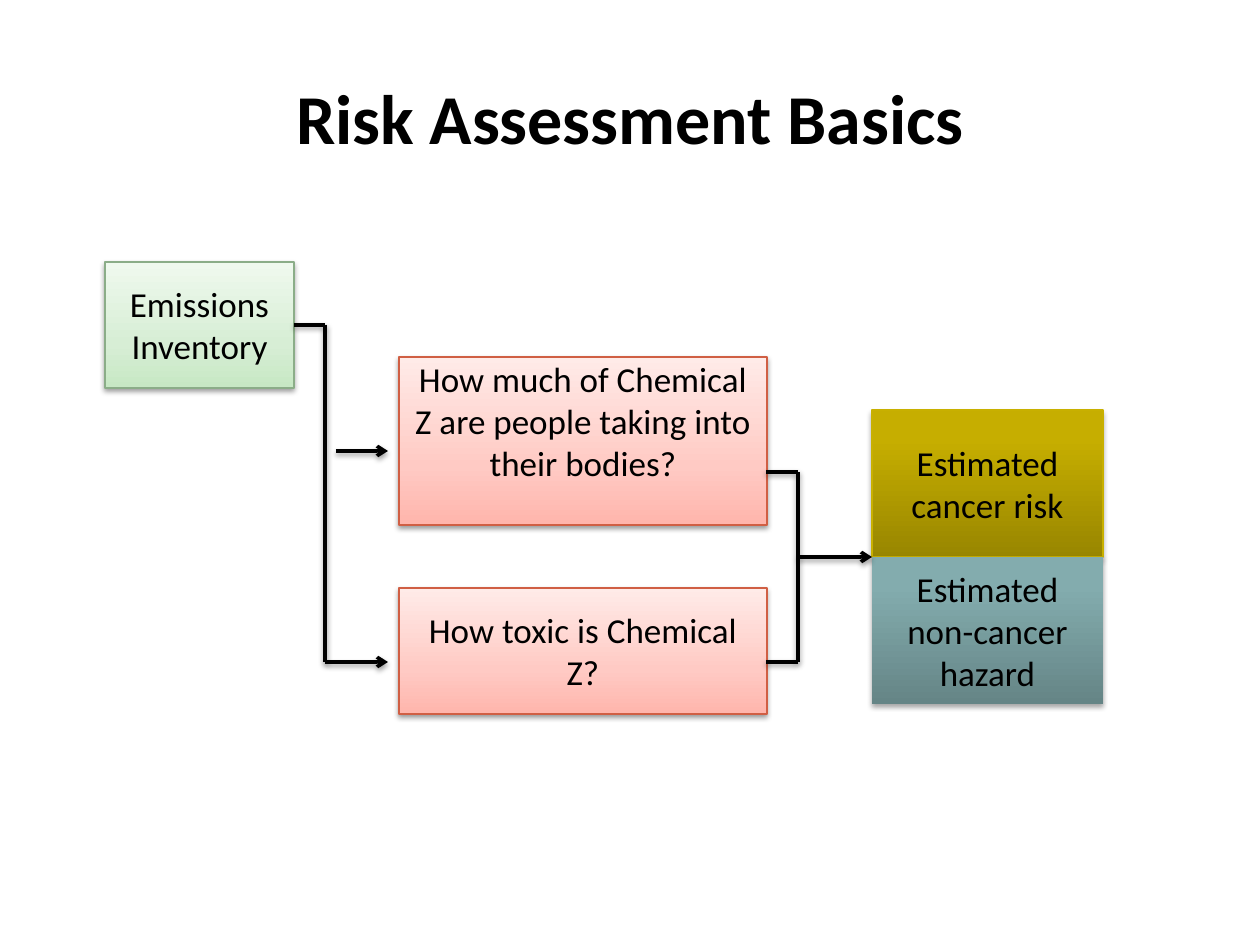
from copy import deepcopy

from lxml.etree import SubElement
from pptx import Presentation
from pptx.dml.color import RGBColor
from pptx.enum.shapes import MSO_CONNECTOR, MSO_SHAPE
from pptx.enum.text import MSO_ANCHOR, PP_ALIGN
from pptx.oxml.ns import qn
from pptx.util import Inches, Pt

SCALE = Inches(1) / 126  # EMU in one px
FONT = "Calibri"
HEX = {
    "ink": "000000",
    "green": "8BAD88",
    "red": "D05F44",
    "gold": "C8B000",
}
# Colours at each stop, from bottom to top
FADES = {
    "green": ((0, "C7E8C4"), (0.35, "D7EED5"), (1, "EFF9EE")),
    "red": ((0, "FFB5AC"), (0.35, "FFCAC4"), (1, "FFEBE8")),
    "gold": ((0, "988600"), (0.8, "C6AE00"), (1, "C7AF00")),
    "teal": ((0, "658586"), (0.8, "83ACAE"), (1, "82AEAF")),
}


def px(*nums):
    return [round(num * SCALE) for num in nums]


def rgb(name):
    return RGBColor.from_string(HEX[name])


def add_shade(item, drop=1.6, alpha=38):
    """Give a box or a line a soft shadow below it."""
    props = item._element.spPr
    effects = props.find(qn("a:effectLst"))
    if effects is None:
        effects = SubElement(props, qn("a:effectLst"))
    outer = SubElement(effects, qn("a:outerShdw"), blurRad=str(Pt(3.1)),
                       dist=str(Pt(drop)), dir="5400000", rotWithShape="0")
    color = SubElement(outer, qn("a:srgbClr"), val=HEX["ink"])
    SubElement(color, qn("a:alpha"), val=str(alpha * 1000))


def set_fade(shape, stops):
    fill = shape.fill
    fill.gradient()
    fill.gradient_angle = 90
    marks = shape._element.spPr.find(qn("a:gradFill")).find(qn("a:gsLst"))
    marks.append(deepcopy(marks[0]))
    for mark, (place, color) in zip(fill.gradient_stops, stops):
        mark.position = place
        mark.color.rgb = RGBColor.from_string(color)


def set_text(shape, words, size, bold=False):
    frame = shape.text_frame
    frame.word_wrap = True
    frame.vertical_anchor = MSO_ANCHOR.MIDDLE
    para = frame.paragraphs[0]
    para.alignment = PP_ALIGN.CENTER
    run = para.add_run()
    run.text = words
    run.font.name = FONT
    run.font.size = Pt(size)
    run.font.bold = bold
    run.font.color.rgb = rgb("ink")


def add_title(slide, words):
    box = slide.shapes.add_textbox(*px(63, 38, 1134, 157))
    set_text(box, words, 40, True)


def add_box(slide, words, place, tone, **shade):
    box = slide.shapes.add_shape(MSO_SHAPE.RECTANGLE, *px(*place))
    box.shadow.inherit = False
    set_fade(box, FADES[tone])
    if tone in HEX:
        box.line.color.rgb = rgb(tone)
        box.line.width = Pt(0.75)
    else:
        box.line.fill.background()
    add_shade(box, **shade)
    set_text(box, words, 20)
    return box


def add_line(slide, ends, arrow=False):
    line = slide.shapes.add_connector(MSO_CONNECTOR.STRAIGHT, *px(*ends))
    line.line.color.rgb = rgb("ink")
    line.line.width = Pt(2)
    if arrow:
        SubElement(line.line._get_or_add_ln(), qn("a:tailEnd"), type="arrow")
    add_shade(line)


def main():
    deck = Presentation()
    deck.slide_width, deck.slide_height = px(1260, 945)
    slide = deck.slides.add_slide(deck.slide_layouts[6])
    add_title(slide, "Risk Assessment Basics")

    # Source and the two questions
    add_box(slide, "Emissions Inventory", (105, 262, 189, 126), "green")
    dose = add_box(
        slide, "How much of Chemical Z are people taking into their bodies?",
        (399, 357, 368, 168), "red")
    dose.text_frame.margin_top, dose.text_frame.margin_bottom = px(0, 42)
    add_box(slide, "How toxic is Chemical Z?", (399, 588, 368, 126), "red")

    # Stacked results
    results = (("Estimated cancer risk", "gold"),
               ("Estimated non-cancer hazard", "teal"))
    for row, (words, tone) in enumerate(results):
        add_box(slide, words, (872, 410 + 147 * row, 231, 147), tone,
                drop=1.8, alpha=35)

    # Branch from source to questions
    add_line(slide, (294, 325, 325, 325))
    add_line(slide, (325, 325, 325, 662))
    add_line(slide, (325, 662, 388, 662), True)
    add_line(slide, (336, 451, 388, 451), True)

    # Bracket from questions to results
    for level in (472, 662):
        add_line(slide, (766, level, 798, level))
    add_line(slide, (798, 472, 798, 662))
    add_line(slide, (798, 557, 872, 557), True)

    deck.save("out.pptx")


if __name__ == "__main__":
    main()
